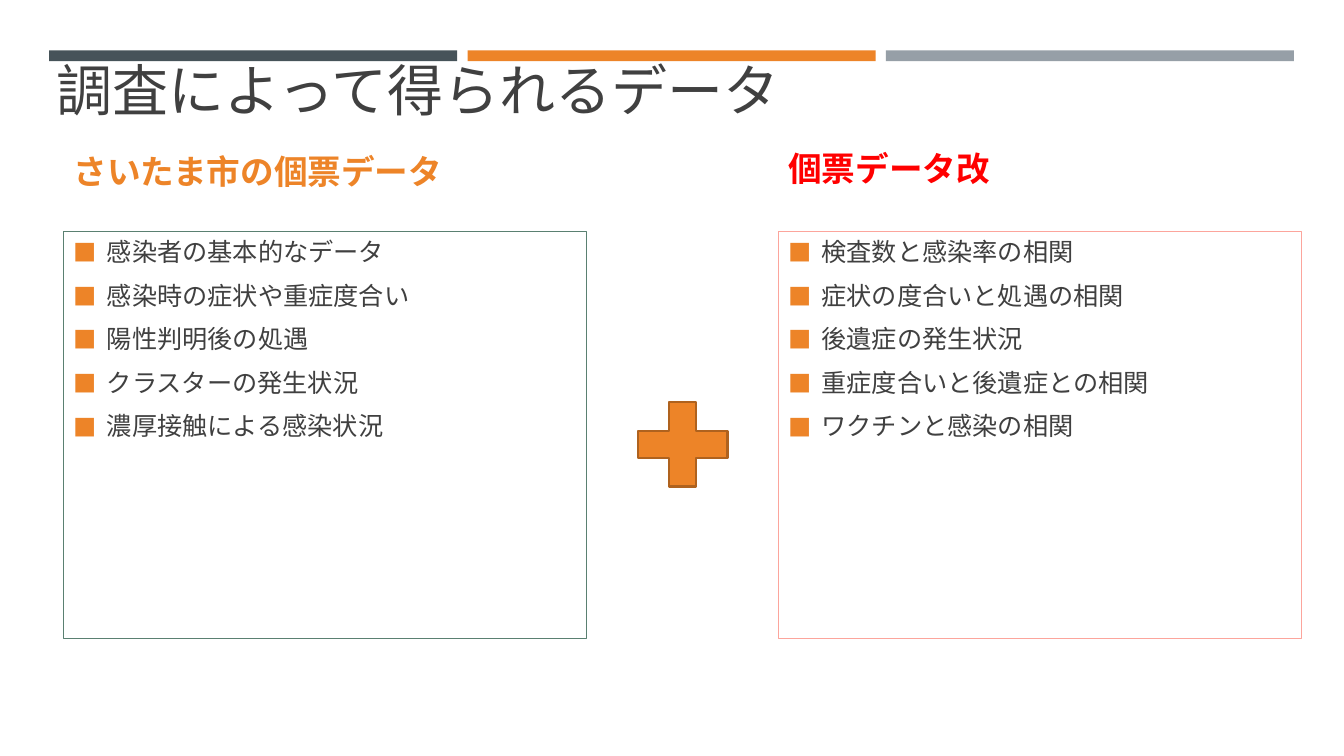
from lxml import etree
from pptx import Presentation, util as u
from pptx.dml.color import RGBColor
from pptx.enum import shapes, text
from pptx.oxml.ns import qn

FONT = "Noto Sans CJK JP"
ORANGE, GRAY = "ED8428", "404040"
HEADING_TOP, LIST_TOP = 3.14, 5.84
LIST_WIDTH, LIST_HEIGHT = 13.18, 10.24


def color(hex_code):
    return RGBColor.from_string(hex_code)


def place(part, left, top, width, height):
    part.left, part.top = u.Cm(left), u.Cm(top)
    part.width, part.height = u.Cm(width), u.Cm(height)


def add_bullet(paragraph):
    props = paragraph._p.get_or_add_pPr()
    props.set("marL", str(u.Cm(0.84)))
    props.set("indent", str(u.Cm(-0.84)))
    tint = etree.SubElement(props, qn("a:buClr"))
    etree.SubElement(tint, qn("a:srgbClr"), val=ORANGE)
    etree.SubElement(props, qn("a:buSzPct"), val="92000")
    etree.SubElement(props, qn("a:buFont"), typeface=FONT)
    etree.SubElement(props, qn("a:buChar"), char="■")


def write(part, lines, size, tint=GRAY, bold=False, anchor=text.MSO_ANCHOR.TOP,
          bullets=False, line_height=None):
    frame = part.text_frame
    frame.text = "\n".join(lines)
    frame.word_wrap = True
    frame.auto_size = text.MSO_AUTO_SIZE.NONE
    frame.vertical_anchor = anchor
    for number, paragraph in enumerate(frame.paragraphs):
        paragraph.alignment = text.PP_ALIGN.LEFT
        paragraph.space_before = u.Pt(size * 0.2 if number else 0)
        paragraph.space_after = u.Pt(6 if bullets else 0)
        if line_height:
            paragraph.line_spacing = u.Pt(line_height)
        if bullets:
            add_bullet(paragraph)
        for run in paragraph.runs:
            run.font.size, run.font.bold = u.Pt(size), bold
            run.font.name = FONT
            run.font.color.rgb = color(tint)
            east_asian = etree.Element(qn("a:ea"), typeface=FONT)
            run._r.rPr.find(qn("a:latin")).addnext(east_asian)


def draw_band(slide, left, top, width, height, gap=0.26):
    tints = ["465359", ORANGE, "969FA7"]
    step = (width + gap) / len(tints)
    for number, tint in enumerate(tints):
        bar = slide.shapes.add_shape(shapes.MSO_SHAPE.RECTANGLE, 0, 0, 0, 0)
        place(bar, left + number * step, top, step - gap, height)
        bar.shadow.inherit = False
        bar.fill.solid()
        bar.fill.fore_color.rgb = color(tint)
        bar.line.fill.background()


def fill_column(heading, topics, left, heading_top, title, tint, border, items):
    place(heading, left, heading_top, 14.3, 2.28)
    write(heading, [title], 24, tint, bold=True, anchor=text.MSO_ANCHOR.MIDDLE)
    place(topics, left, LIST_TOP, LIST_WIDTH, LIST_HEIGHT)
    topics.line.color.rgb = color(border)
    topics.line.width = u.Pt(0.75)
    write(topics, items, 18, bullets=True, line_height=21.5)


def draw_plus(slide, left, top, width, height):
    plus = slide.shapes.add_shape(shapes.MSO_SHAPE.MATH_PLUS, 0, 0, 0, 0)
    place(plus, left, top, width, height)
    plus.shadow.inherit = False
    plus.fill.solid()
    plus.fill.fore_color.rgb = color(ORANGE)
    plus.line.color.rgb = color("AF621E")
    plus.line.width = u.Pt(1.75)


def build_comparison(deck):
    slide = deck.slides.add_slide(deck.slide_layouts[4])
    title, left_heading, left_topics, right_heading, right_topics = slide.placeholders
    draw_band(slide, 1.24, 1.27, 31.37, 0.27)
    place(title, 1.17, -0.08, 29.03, 3.3)
    write(title, ["調査によって得られるデータ"], 40, anchor=text.MSO_ANCHOR.BOTTOM)
    fill_column(left_heading, left_topics, 1.6, HEADING_TOP + 0.04,
                "さいたま市の個票データ", ORANGE, "5A8071",
                ["感染者の基本的なデータ", "感染時の症状や重症度合い", "陽性判明後の処遇",
                 "クラスターの発生状況", "濃厚接触による感染状況"])
    fill_column(right_heading, right_topics, 19.61, HEADING_TOP - 0.04,
                "個票データ改", "FF0000", "FCA59C",
                ["検査数と感染率の相関", "症状の度合いと処遇の相関", "後遺症の発生状況",
                 "重症度合いと後遺症との相関", "ワクチンと感染の相関"])
    draw_plus(slide, 15.67, 9.75, 3.07, 2.9)


def main():
    deck = Presentation()
    deck.slide_width, deck.slide_height = u.Cm(33.87), u.Cm(19.05)
    build_comparison(deck)
    deck.save("out.pptx")


if __name__ == "__main__":
    main()
